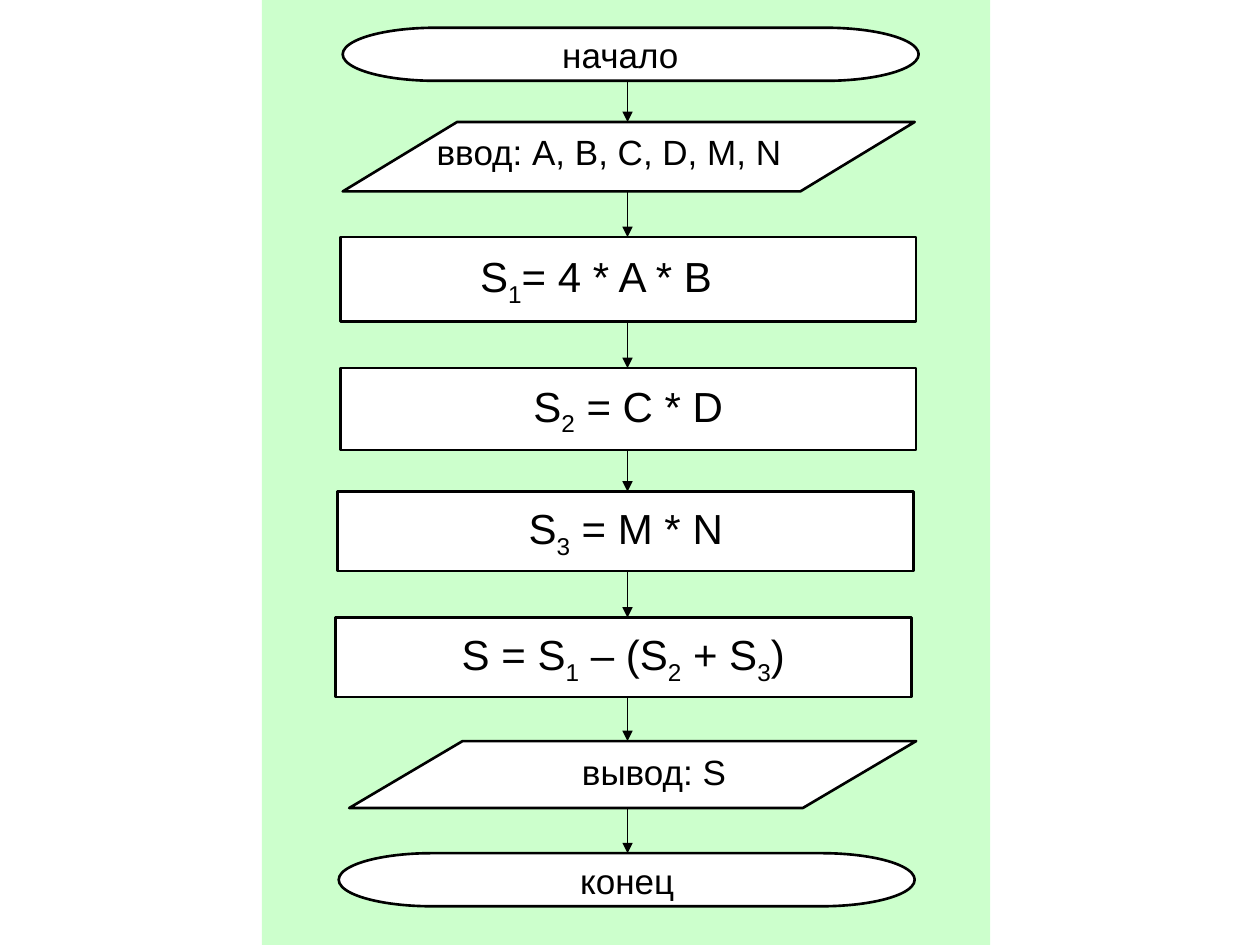
from dataclasses import dataclass
from itertools import pairwise

from lxml.etree import SubElement
from pptx import Presentation
from pptx.dml.color import RGBColor
from pptx.enum.shapes import MSO_CONNECTOR, MSO_SHAPE
from pptx.enum.text import MSO_ANCHOR, PP_ALIGN
from pptx.oxml.ns import qn
from pptx.util import Cm, Pt


@dataclass(frozen=True)
class Theme:
    ink: RGBColor = RGBColor(0, 0, 0)
    paper: RGBColor = RGBColor(255, 255, 255)
    panel: RGBColor = RGBColor(0xCC, 0xFF, 0xCC)
    font: str = "Arial"
    label_size: int = 20
    formula_size: int = 24
    outline: float = 1.5
    arrow: float = 1


@dataclass(frozen=True)
class Box:
    left: float
    top: float
    width: float
    height: float

    @property
    def bottom(self):
        return self.top + self.height

    def inside(self, left, top, width, height):
        return Box(self.left + left, self.top + top, width, height)

    def lengths(self):
        return [Cm(value) for value in (self.left, self.top, self.width, self.height)]


@dataclass(frozen=True)
class Step:
    kind: MSO_SHAPE
    text: str
    box: Box
    label: Box | None = None
    indent: float | None = None


THEME = Theme()
PANEL = Box(5.28, 0, 14.68, 19.05)
AXIS = 7.37
STEPS = [
    Step(MSO_SHAPE.FLOWCHART_TERMINATOR, "начало",
         Box(1.63, 0.56, 11.61, 1.07), Box(1.29, 0, 8.61, 1.19)),
    Step(MSO_SHAPE.FLOWCHART_DATA, "ввод: A, B, C, D, M, N",
         Box(1.63, 2.46, 11.53, 1.4), Box(1.32, 0.05, 8.1, 1.19)),
    Step(MSO_SHAPE.RECTANGLE, "S_1_= 4 * A * B",
         Box(1.58, 4.78, 11.61, 1.7), indent=2.82),
    Step(MSO_SHAPE.FLOWCHART_PROCESS, "S_2_ = C * D", Box(1.58, 7.42, 11.61, 1.65)),
    Step(MSO_SHAPE.FLOWCHART_PROCESS, "S_3_ = M * N", Box(1.53, 9.91, 11.61, 1.6)),
    Step(MSO_SHAPE.FLOWCHART_PROCESS, "S = S_1_ – (S_2_ + S_3_)",
         Box(1.48, 12.45, 11.61, 1.6)),
    Step(MSO_SHAPE.FLOWCHART_DATA, "вывод: S",
         Box(1.76, 14.94, 11.43, 1.35), Box(1.7, 0.07, 8.89, 1.19)),
    Step(MSO_SHAPE.FLOWCHART_TERMINATOR, "конец",
         Box(1.55, 17.2, 11.61, 1.07), Box(2.59, 0, 6.45, 1.19)),
]


def add_block(page, kind, box, fill, outlined=True):
    block = page.shapes.add_shape(kind, *box.lengths())
    block.shadow.inherit = False
    block.fill.solid()
    block.fill.fore_color.rgb = fill
    if outlined:
        block.line.color.rgb = THEME.ink
        block.line.width = Pt(THEME.outline)
    else:
        block.line.fill.background()
    return block


def write_text(frame, text, size, alignment=PP_ALIGN.CENTER):
    frame.word_wrap = True
    para = frame.paragraphs[0]
    para.alignment = alignment
    for position, part in enumerate(text.split("_")):
        span = para.add_run()
        span.text = part
        span.font.name = THEME.font
        span.font.size = Pt(size)
        span.font.color.rgb = THEME.ink
        if position % 2:
            span._r.get_or_add_rPr().set("baseline", "-25000")


def add_step(page, step, box):
    block = add_block(page, step.kind, box, THEME.paper)
    if step.label:
        place = box.inside(step.label.left, step.label.top,
                           step.label.width, step.label.height)
        label = page.shapes.add_textbox(*place.lengths())
        write_text(label.text_frame, step.text, THEME.label_size)
        return
    frame = block.text_frame
    frame.vertical_anchor = MSO_ANCHOR.MIDDLE
    alignment = PP_ALIGN.CENTER
    if step.indent:
        frame.margin_left = Cm(step.indent)
        alignment = PP_ALIGN.LEFT
    write_text(frame, step.text, THEME.formula_size, alignment)


def add_arrow(page, across, start, end):
    arrow = page.shapes.add_connector(
        MSO_CONNECTOR.STRAIGHT, Cm(across), Cm(start), Cm(across), Cm(end))
    arrow.line.color.rgb = THEME.ink
    arrow.line.width = Pt(THEME.arrow)
    SubElement(arrow.line._get_or_add_ln(), qn("a:tailEnd"), type="triangle")
    SubElement(arrow._element.spPr, qn("a:effectLst"))


def add_flowchart(page, panel):
    add_block(page, MSO_SHAPE.RECTANGLE, panel, THEME.panel, outlined=False)
    boxes = [panel.inside(step.box.left, step.box.top, step.box.width, step.box.height)
             for step in STEPS]
    for step, box in zip(STEPS, boxes):
        add_step(page, step, box)
    for upper, lower in pairwise(boxes):
        add_arrow(page, panel.left + AXIS, upper.bottom, lower.top)


def main():
    deck = Presentation()
    deck.slide_width = Cm(25.4)
    deck.slide_height = Cm(19.05)
    page = deck.slides.add_slide(deck.slide_layouts[6])
    add_flowchart(page, PANEL)
    deck.save("out.pptx")


if __name__ == "__main__":
    main()
